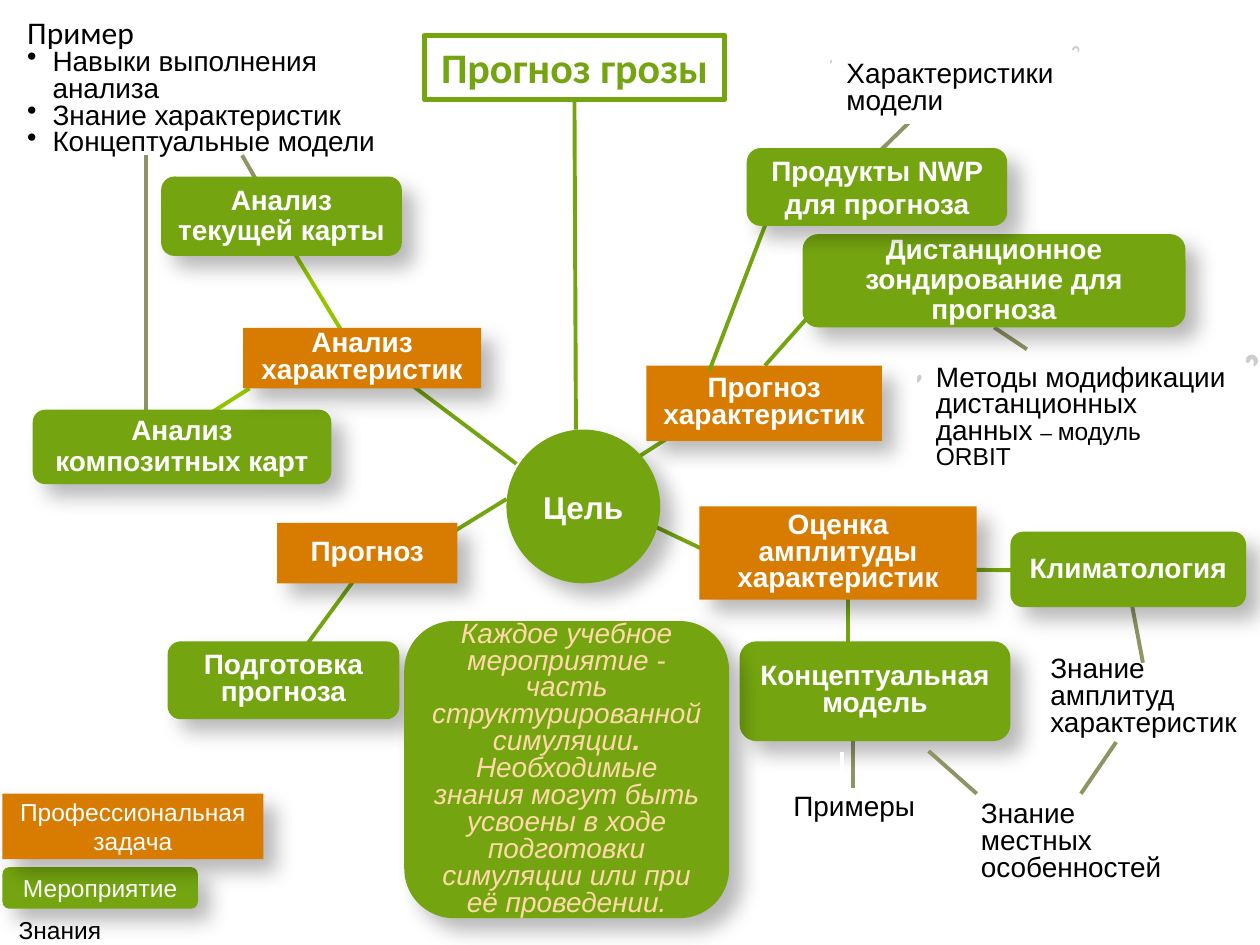
from lxml import etree
from pptx import Presentation
from pptx.dml.color import RGBColor
from pptx.enum.shapes import MSO_CONNECTOR, MSO_SHAPE
from pptx.enum.text import MSO_ANCHOR, PP_ALIGN
from pptx.oxml.ns import qn
from pptx.util import Cm, Pt

STRAIGHT = MSO_CONNECTOR.STRAIGHT
RECTANGLE = MSO_SHAPE.RECTANGLE
ROUNDED = MSO_SHAPE.ROUNDED_RECTANGLE
OVAL = MSO_SHAPE.OVAL
SCROLL = MSO_SHAPE.HORIZONTAL_SCROLL
MIDDLE, TOP = MSO_ANCHOR.MIDDLE, MSO_ANCHOR.TOP
CENTER, LEFT = PP_ALIGN.CENTER, PP_ALIGN.LEFT

GREEN, LIME, OLIVE, ORANGE = "74A510", "93C600", "909465", "D77C01"
WHITE, BLACK, PEACH = "FFFFFF", "000000", "FFD9A7"

EVENT = dict(shape=ROUNDED, fill=GREEN, shadow=True, size=16, bold=True,
             color=WHITE, align=CENTER, spacing=0.8)
TASK = dict(EVENT, shape=RECTANGLE, fill=ORANGE)
KNOWLEDGE = dict(shape=SCROLL, size=16, color=BLACK, spacing=0.8)
SHEET = dict(KNOWLEDGE, fill=WHITE, line=(WHITE, 2))
GOAL = dict(EVENT, shape=OVAL, size=18, spacing=1)
TITLE = dict(shape=RECTANGLE, fill=WHITE, line=(GREEN, 3), name="Calibri", size=24,
             bold=True, color=GREEN, align=CENTER, anchor=TOP, indent=0.97)
SUMMARY = dict(EVENT, bold=False, italic=True, color=PEACH)
CAPTION = dict(name="Calibri", size=18, color=BLACK, anchor=TOP)
SKILLS = dict(size=16, color=BLACK, spacing=0.8, indent=0.51, bullet="•")


def rgb(value):
    return RGBColor.from_string(value)


def link(page, box, ends, color, width=2.25):
    x1, y1, x2, y2 = ends
    left, top = box
    line = page.shapes.add_connector(
        STRAIGHT, Cm(left + x1), Cm(top + y1), Cm(left + x2), Cm(top + y2))
    line.line.color.rgb = rgb(color)
    line.line.width = Pt(width)
    etree.SubElement(line._element.spPr, qn("a:effectLst"))


def cast_shadow(shape):
    effects = shape._element.spPr.find(qn("a:effectLst"))
    outer = etree.SubElement(effects, qn("a:outerShdw"), blurRad=str(Pt(11.8)),
                             dist=str(Pt(10)), dir="2700000", algn="tl", rotWithShape="0")
    tone = etree.SubElement(outer, qn("a:srgbClr"), val=BLACK)
    etree.SubElement(tone, qn("a:alpha"), val="28000")


def paint(shape, look):
    if "fill" in look:
        shape.fill.solid()
        shape.fill.fore_color.rgb = rgb(look["fill"])
    else:
        shape.fill.background()
    if "line" in look:
        color, width = look["line"]
        shape.line.color.rgb = rgb(color)
        shape.line.width = Pt(width)
    else:
        shape.line.fill.background()
    shape.shadow.inherit = False
    if look.get("shadow"):
        cast_shadow(shape)


def write(frame, paragraphs, look):
    frame.word_wrap = True
    frame.vertical_anchor = look.get("anchor", MIDDLE)
    for index, pieces in enumerate(paragraphs):
        para = frame.add_paragraph() if index else frame.paragraphs[0]
        para.alignment = look.get("align", LEFT)
        para.line_spacing = look.get("spacing", 1)
        if "indent" in look:
            props = para._p.get_or_add_pPr()
            props.set("marL", str(Cm(look["indent"])))
            props.set("indent", str(-Cm(look["indent"])))
            if "bullet" in look:
                etree.SubElement(props, qn("a:buChar"), char=look["bullet"])
        for text, changes in pieces:
            form = {"name": "Arial", "bold": False, "italic": False, **look, **changes}
            span = para.add_run()
            span.text = text
            span.font.size = Pt(form["size"])
            span.font.color.rgb = rgb(form["color"])
            for key in ("name", "bold", "italic"):
                setattr(span.font, key, form[key])


def node(page, box, place, content, style, **changes):
    look = {**style, **changes}
    left, top, width, height = place
    bounds = Cm(box[0] + left), Cm(box[1] + top), Cm(width), Cm(height)
    if "shape" in look:
        shape = page.shapes.add_shape(look["shape"], *bounds)
        paint(shape, look)
    else:
        shape = page.shapes.add_textbox(*bounds)
    if isinstance(content, str):
        content = [[(text, {})] for text in content.split("\n")]
    write(shape.text_frame, content, look)


def legend(page, box):
    plain = dict(size=14, bold=False, spacing=1)
    node(page, box, (0.05, 1.48, 3.94, 0.84), "Мероприятие", EVENT, **plain)
    node(page, box, (0.05, 0, 5.26, 1.32), "Профессиональная задача", TASK, **plain)
    node(page, box, (0, 2.29, 3.89, 1.02), "Знания", KNOWLEDGE, size=14)


def analysis(page, box):
    for ends, color in [((4.96, 3.66, 4.58, 3), OLIVE), ((2.65, 8.13, 2.65, 3), OLIVE),
                        ((6.61, 6.58, 5.24, 4.32), LIME), ((4.73, 7.7, 2.65, 9.02), LIME),
                        ((7.65, 7.37, 10.11, 9.22), GREEN)]:
        link(page, box, ends, color)
    node(page, box, (0, 0, 3.81, 1.02), "Пример", CAPTION)
    node(page, box, (0, 1.02, 8.26, 1.88),
         "Навыки выполнения анализа\nЗнание характеристик\nКонцептуальные модели", SKILLS)
    node(page, box, (2.95, 3.43, 4.85, 1.6), "Анализ текущей карты", EVENT, spacing=0.9)
    node(page, box, (0.36, 8.13, 6.02, 1.5), "Анализ композитных карт", EVENT, spacing=0.9)
    node(page, box, (4.6, 6.48, 4.8, 1.22), "Анализ характеристик", TASK)


def preparation(page, box):
    for ends in [(4.01, 1.29, 2.61, 3.2), (4.77, 1.27, 6.83, 0)]:
        link(page, box, ends, GREEN)
    node(page, box, (0, 2.87, 4.67, 1.57), "Подготовка прогноза", EVENT)
    node(page, box, (2.21, 0.48, 3.63, 1.22), "Прогноз", TASK)


def forecast(page, box):
    for ends, color in [((4.21, 4.77, 2.69, 6.48), GREEN), ((7.31, 5.71, 7.97, 6.15), OLIVE),
                        ((4.19, 2.95, 5.76, 1.42), OLIVE), ((1.9, 7.19, 0, 8.41), GREEN)]:
        link(page, box, ends, color)
    methods = [[("Методы модификации дистанционных данных ", {}),
                ("– ", {"size": 12}), ("модуль", {"size": 14})],
               [("ORBIT", {"size": 14})]]
    node(page, box, (5.56, 6.22, 7.11, 2.62), methods, SHEET)
    node(page, box, (3.45, 3.83, 7.72, 1.88),
         "Дистанционное зондирование для прогноза", EVENT, spacing=0.9)
    node(page, box, (3.86, 0, 5.21, 1.8), "Характеристики модели", SHEET)
    node(page, box, (0.3, 6.48, 4.75, 1.52), "Прогноз характеристик", TASK)
    link(page, box, (2.71, 3.61, 1.57, 6.58), GREEN)
    node(page, box, (2.36, 2.13, 5.18, 1.5), "Продукты NWP для прогноза", EVENT,
         line=(GREEN, 2), spacing=1)


def amplitude(page, box):
    for ends, color in [((10.16, 3.15, 9.9, 1.78), OLIVE), ((3.58, 1.25, 9.35, 1.3), GREEN),
                        ((4.21, 1.55, 4.21, 3.61), GREEN), ((0, 0.25, 1.83, 1.12), GREEN)]:
        link(page, box, ends, color)
    node(page, box, (7.82, 2.95, 4.7, 1.8), "Знание амплитуд характеристик", KNOWLEDGE)
    node(page, box, (2.21, 5.51, 4.19, 1.14), "Примеры", SHEET, align=CENTER)
    link(page, box, (4.32, 5.67, 4.32, 4.73), OLIVE)
    node(page, box, (7.49, 0.51, 4.75, 1.52), "Климатология", EVENT, spacing=0.9)
    node(page, box, (2.03, 2.72, 5.46, 2.01), "Концептуальная модель", EVENT)
    node(page, box, (1.22, 0, 5.59, 1.88), "Оценка амплитуды характеристик", TASK)
    node(page, box, (6.42, 5.87, 4.6, 1.8), "Знание местных особенностей", KNOWLEDGE)
    link(page, box, (4.09, 4.95, 4.09, 5.79), WHITE, 2)
    for ends in [(8.91, 5.79, 9.62, 4.75), (6.81, 5.79, 5.84, 4.93)]:
        link(page, box, ends, OLIVE)


def core(page, box):
    link(page, box, (3.43, 1.27, 3.46, 7.95), GREEN)
    node(page, box, (0.41, 0, 6.05, 1.3), "Прогноз грозы", TITLE)
    node(page, box, (2.06, 7.95, 3.1, 3.1), "Цель", GOAL)
    summary = [[("Каждое учебное мероприятие - часть структурированной симуляции", {}),
                (". ", {"bold": True}),
                ("Необходимые знания могут быть усвоены в ходе подготовки "
                 "симуляции или при её проведении.", {})]]
    node(page, box, (0, 11.81, 6.55, 5.99), summary, SUMMARY)


def main():
    deck = Presentation()
    deck.slide_width, deck.slide_height = Cm(25.4), Cm(19.05)
    page = deck.slides.add_slide(deck.slide_layouts[6])
    for region, box in [(legend, (0, 16)), (analysis, (0.3, 0.13)),
                        (preparation, (3.38, 10.06)), (forecast, (12.73, 0.89)),
                        (amplitude, (12.88, 10.21)), (core, (8.15, 0.71))]:
        region(page, box)
    deck.save("out.pptx")


if __name__ == "__main__":
    main()
